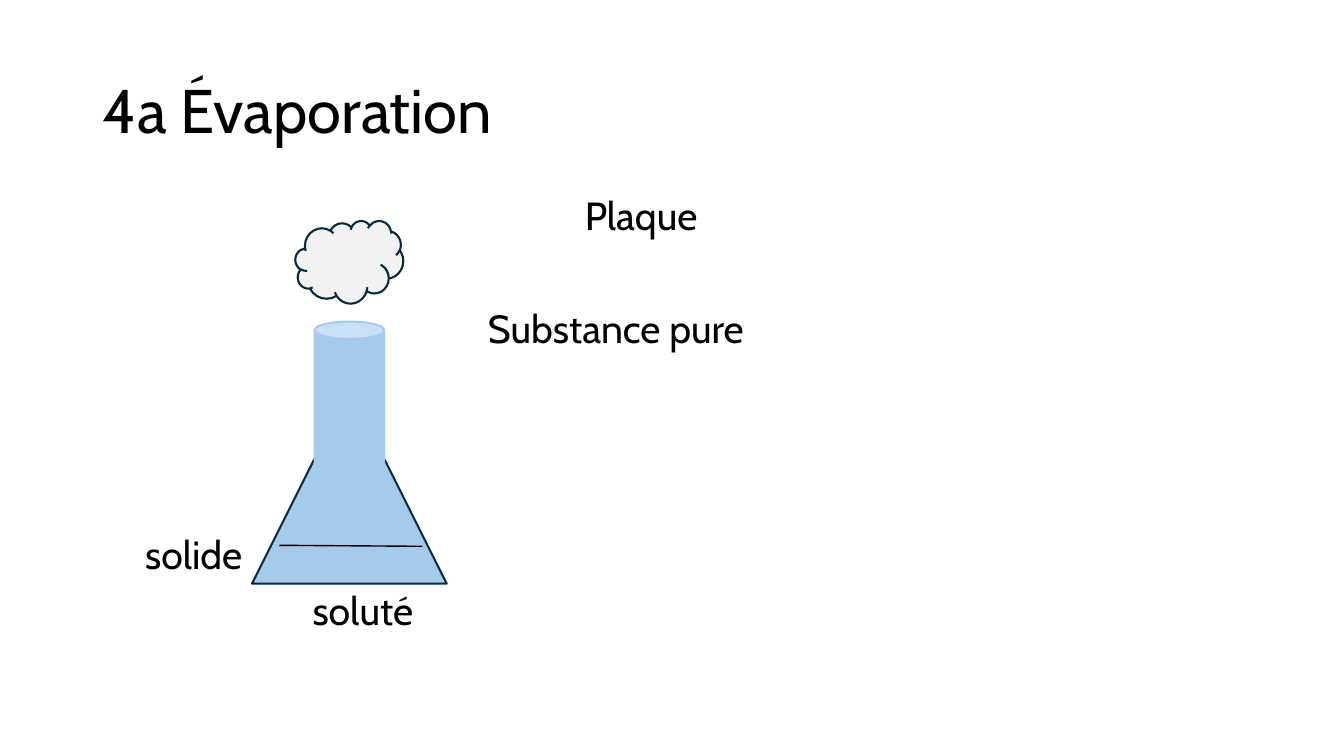
from dataclasses import dataclass

from lxml.etree import SubElement
from pptx import Presentation
from pptx.dml.color import RGBColor
from pptx.enum.shapes import MSO_CONNECTOR, MSO_SHAPE
from pptx.enum.text import MSO_ANCHOR
from pptx.oxml.ns import qn
from pptx.util import Emu, Pt

EMU_PER_PX = 9144  # 100 px to the inch


def px(length):
    return Emu(length * EMU_PER_PX)


@dataclass(frozen=True)
class Theme:
    font: str = "Cabin"
    title_size: int = 44
    label_size: int = 28
    line_spacing: float = 0.9
    outline_width: float = 1.5
    level_width: float = 1
    text: str = "000000"
    glass: str = "A6CAEC"
    vapour: str = "F2F2F2"
    outline: str = "092A39"


class SlideBuilder:
    def __init__(self, slide, theme):
        self.slide = slide
        self.theme = theme

    def text(self, words, left, top, width, height, size, anchor=MSO_ANCHOR.TOP):
        text_box = self.slide.shapes.add_textbox(px(left), px(top), px(width), px(height))
        frame = text_box.text_frame
        frame.text = words
        frame.word_wrap = True
        frame.vertical_anchor = anchor
        frame.margin_left = frame.margin_right = 0
        frame.margin_top = frame.margin_bottom = 0
        paragraph = frame.paragraphs[0]
        paragraph.line_spacing = self.theme.line_spacing
        font = paragraph.runs[0].font
        font.name = self.theme.font
        font.size = Pt(size)
        font.color.rgb = RGBColor.from_string(self.theme.text)

    def shape(self, kind, left, top, width, height, fill, outline):
        shape = self.slide.shapes.add_shape(kind, px(left), px(top), px(width), px(height))
        shape.shadow.inherit = False
        shape.fill.solid()
        shape.fill.fore_color.rgb = RGBColor.from_string(fill)
        shape.line.color.rgb = RGBColor.from_string(outline)
        shape.line.width = Pt(self.theme.outline_width)

    def line(self, start_x, start_y, end_x, end_y):
        connector = self.slide.shapes.add_connector(
            MSO_CONNECTOR.STRAIGHT, px(start_x), px(start_y), px(end_x), px(end_y))
        connector.line.color.rgb = RGBColor.from_string(self.theme.text)
        connector.line.width = Pt(self.theme.level_width)
        SubElement(connector._element.spPr, qn("a:effectLst"))


def main():
    presentation = Presentation()
    presentation.slide_width = px(1333)
    presentation.slide_height = px(750)
    theme = Theme()
    slide = presentation.slides.add_slide(presentation.slide_layouts[6])
    builder = SlideBuilder(slide, theme)

    # Title
    builder.text("4a Évaporation", 102, 40, 1130, 145, theme.title_size, MSO_ANCHOR.MIDDLE)

    # Labels, placed on evenly spaced text rows
    first_row_top, row_pitch = 195, 56
    labels = [
        ("Plaque", 580, 0, 150),
        ("Substance pure", 484, 2, 300),
        ("solide", 144, 6, 120),
        ("soluté", 310, 7, 130),
    ]
    for words, left, row, width in labels:
        builder.text(words, left, first_row_top + row * row_pitch, width, 43, theme.label_size)

    # Flask: body, neck and rising vapour
    builder.shape(MSO_SHAPE.ISOSCELES_TRIANGLE, 250, 386, 193, 193, theme.glass, theme.outline)
    builder.shape(MSO_SHAPE.CAN, 312, 319, 69, 178, theme.glass, theme.glass)
    builder.shape(MSO_SHAPE.CLOUD, 293, 219, 107, 82, theme.vapour, theme.outline)

    # Liquid level
    builder.line(277, 541, 419, 542)

    presentation.save("out.pptx")


if __name__ == "__main__":
    main()
